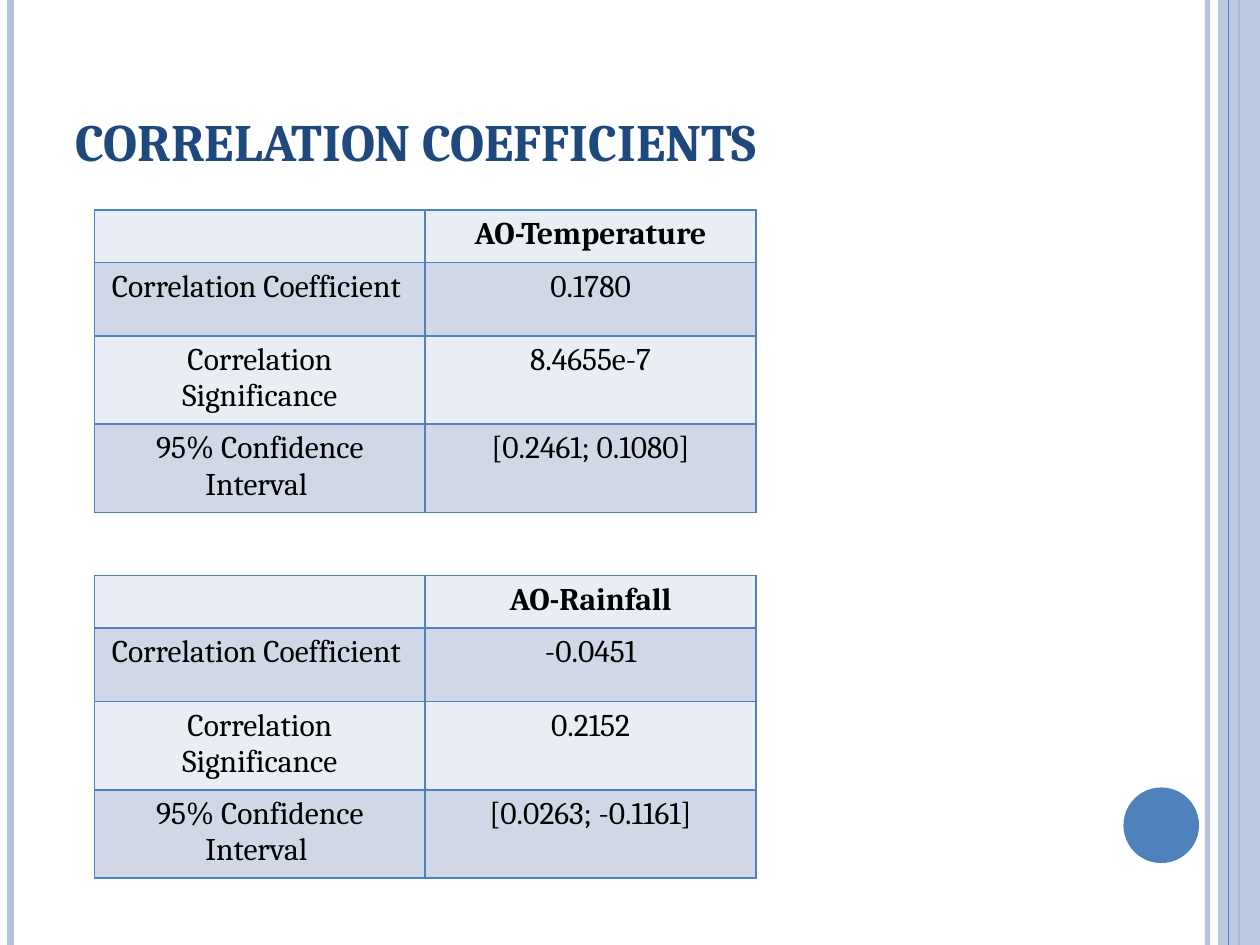
from lxml import etree
from pptx import Presentation
from pptx.dml.color import RGBColor
from pptx.enum.shapes import MSO_CONNECTOR as Conn, MSO_SHAPE as Kind
from pptx.enum.text import MSO_ANCHOR as Anchor, PP_ALIGN as Align
from pptx.oxml.ns import qn
from pptx.util import Pt

# Content
TITLE = "CORRELATION COEFFICIENTS"
LABELS = ["", "Correlation Coefficient ", "Correlation Significance",
          "95% Confidence Interval "]
TABLES = [  # top, values
    (120, ["AO-Temperature", "0.1780", "8.4655e-7", "[0.2461; 0.1080]"]),
    (329, ["AO-Rainfall", "-0.0451", "0.2152", "[0.0263; -0.1161]"]),
]

# Style
WIDE, HIGH = 720, 540
FONT = "Cambria"
BLUE, PALE, NAVY, BLACK = "4F81BD", "B3C1DB", "1F497D", "000000"
BANDS = ["E9EDF4", "D0D8E8"]
LEFT, COL = 54, 189
ROWS = [30, 42, 49, 49]
BACK = [(690, PALE, 3, 93), (6, PALE, 4.5, 100), (708, BLUE, 1.5, 100)]
FRONT = [(702, BLUE, 0.75, 100)]

deck = Presentation()
deck.slide_width, deck.slide_height = Pt(WIDE), Pt(HIGH)
slide = deck.slides.add_slide(deck.slide_layouts[6])
shapes = slide.shapes


def paint(fill, color, alpha=100):
    fill.solid()
    fill.fore_color.rgb = RGBColor.from_string(color)
    if alpha < 100:
        for tint in fill._xPr.iter(qn("a:srgbClr")):
            etree.SubElement(tint, qn("a:alpha"), val=str(alpha * 1000))


def rules(lines):
    for x, color, width, alpha in lines:
        rule = shapes.add_connector(Conn.STRAIGHT, Pt(x), Pt(0), Pt(x), Pt(HIGH))
        rule.line.width = Pt(width)
        paint(rule.line.fill, color, alpha)
        etree.SubElement(rule._element.spPr, qn("a:effectLst"))


def block(kind, x, y, w, h, color, alpha=100):
    part = shapes.add_shape(kind, Pt(x), Pt(y), Pt(w), Pt(h))
    part.shadow.inherit = False
    part.line.fill.background()
    paint(part.fill, color, alpha)


def write(para, text, size, color, bold):
    run = para.add_run()
    run.text = text
    run.font.name, run.font.size, run.font.bold = FONT, Pt(size), bold
    run.font.color.rgb = RGBColor.from_string(color)


def border(cell):
    props = cell._tc.get_or_add_tcPr()
    for side in ("lnL", "lnR", "lnT", "lnB"):
        line = etree.SubElement(props, qn("a:" + side), w=str(Pt(1)))
        fill = etree.SubElement(line, qn("a:solidFill"))
        etree.SubElement(fill, qn("a:srgbClr"), val=BLUE)


def grid(top, values):
    table = shapes.add_table(len(ROWS), 2, Pt(LEFT), Pt(top),
                             Pt(2 * COL), Pt(sum(ROWS))).table
    for col in table.columns:
        col.width = Pt(COL)
    for r, pair in enumerate(zip(LABELS, values)):
        table.rows[r].height = Pt(ROWS[r])
        for c, text in enumerate(pair):
            cell = table.cell(r, c)
            border(cell)
            paint(cell.fill, BANDS[r % 2])
            para = cell.text_frame.paragraphs[0]
            para.alignment = Align.CENTER
            if text:
                write(para, text, 18, BLACK, r == 0)


# Side rules, band and disc
rules(BACK)
block(Kind.RECTANGLE, 696, 0, 24, HIGH, PALE, 87)
rules(FRONT)
block(Kind.OVAL, 642, 450, 43.2, 43.2, BLUE)

# Title
frame = shapes.add_textbox(Pt(36), Pt(12), Pt(588), Pt(90)).text_frame
frame.word_wrap = True
frame.vertical_anchor = Anchor.BOTTOM
write(frame.paragraphs[0], TITLE, 30, NAVY, True)

# Tables
for top, values in TABLES:
    grid(top, values)

deck.save("out.pptx")
